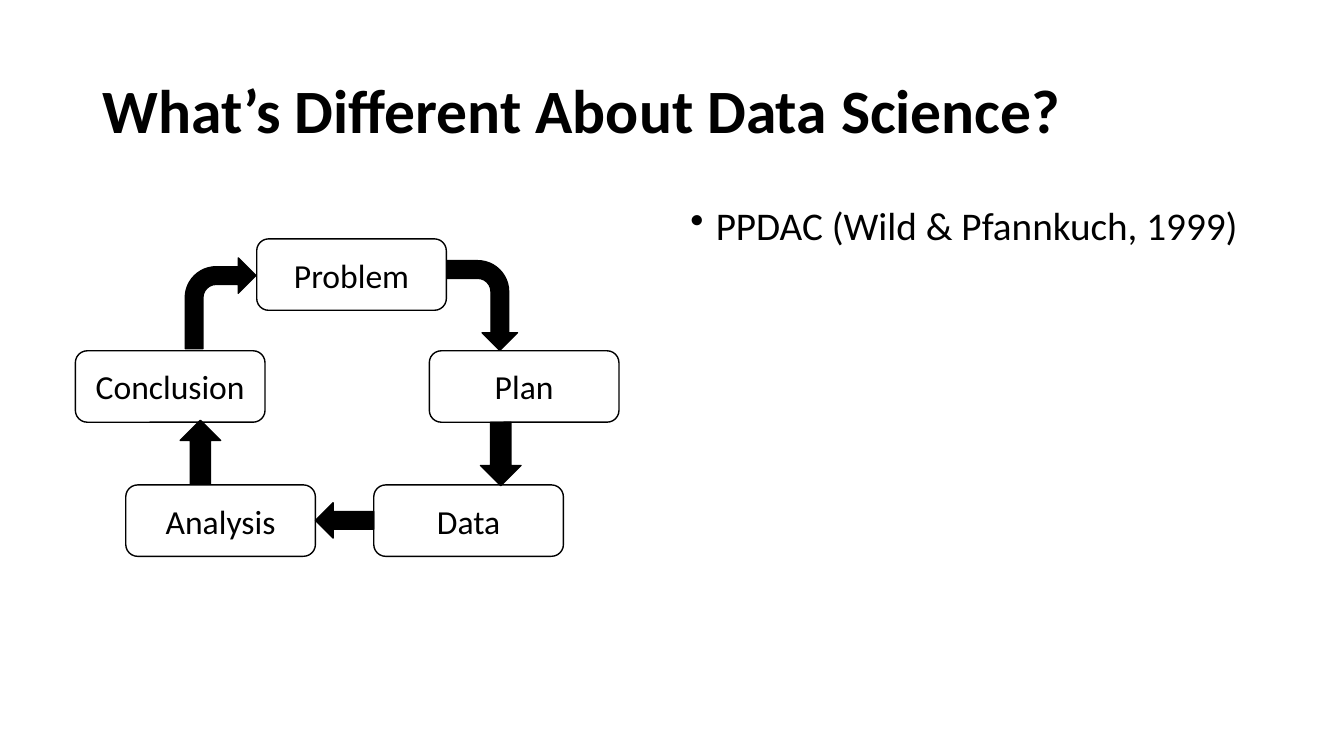
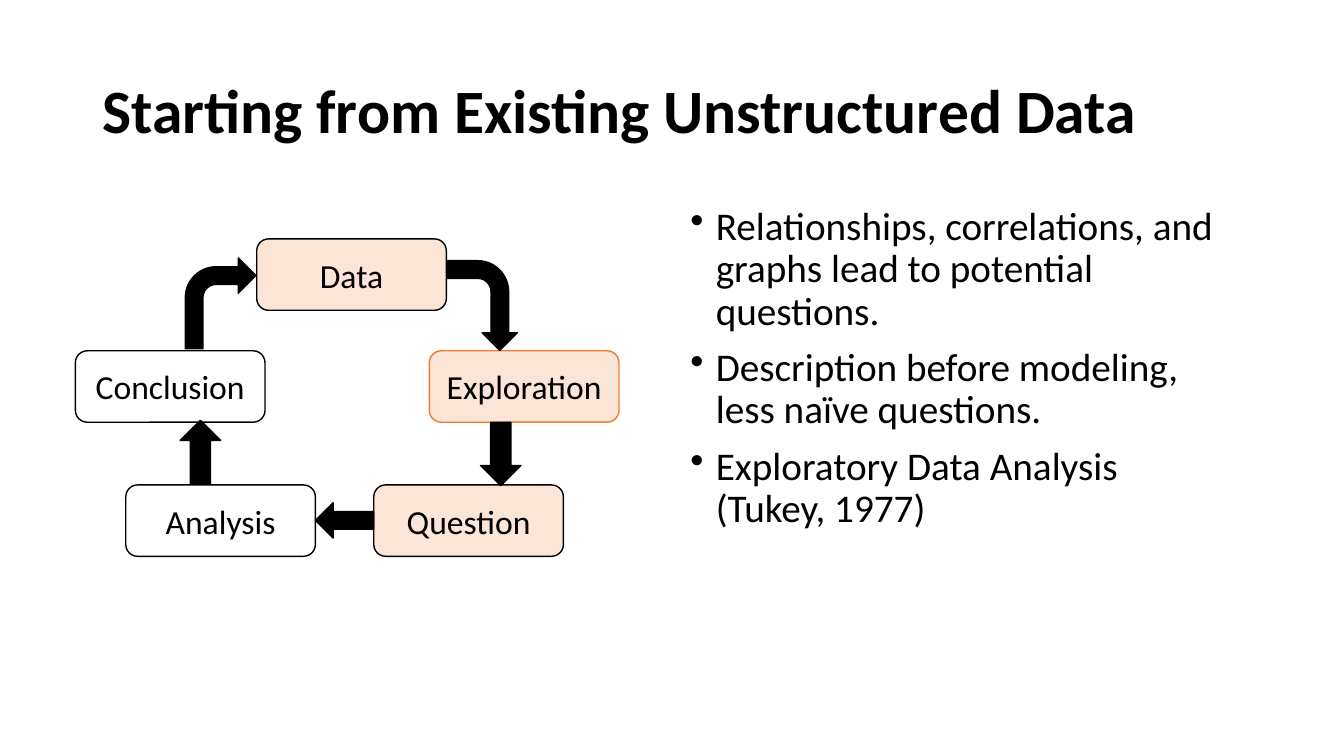
"""Builds two slides that compare inquiry cycles."""
import pptx
import pptx.dml.color
import pptx.enum.shapes
import pptx.enum.text
import pptx.oxml
import pptx.util

Cm = pptx.util.Cm
Pt = pptx.util.Pt
SHAPES = pptx.enum.shapes.MSO_SHAPE
ANCHOR = pptx.enum.text.MSO_ANCHOR
ALIGN = pptx.enum.text.PP_ALIGN

BLACK, PEACH, ORANGE = "000000", "FBE5D6", "ED7D31"
TITLE_BOX = (2.33, 1.01, 29.21, 3.68)
BULLET_BOX = (17.15, 5.08, 14.39, 12.09)
CYCLE_BOX = (1.9, 6.02, 13.7, 8)

TITLE_FONT = {"name": "Calibri", "size": Pt(44), "bold": True}
BULLET_FONT = {"name": "Calibri", "size": Pt(28)}
STEP_FONT = {"name": "Calibri", "size": Pt(24)}
TITLE_PARAGRAPH = {"line_spacing": 0.9}
BULLET_PARAGRAPH = {"line_spacing": 0.9, "space_before": Pt(10)}
STEP_PARAGRAPH = {"alignment": ALIGN.CENTER}

STEP_SIZE = (4.78, 1.8)
STEP_OFFSETS = [(4.57, 0), (8.92, 2.82), (7.52, 6.2), (1.27, 6.2), (0, 2.82)]
ARROWS = [
    (SHAPES.BENT_ARROW, (9.12, 0.79, 2.26, 1.78), 90),
    (SHAPES.BENT_ARROW, (2.77, 0.48, 1.78, 2.29), 0),
    (SHAPES.DOWN_ARROW, (10.21, 4.62, 1.02, 1.6), 0),
    (SHAPES.DOWN_ARROW, (2.64, 4.57, 1.02, 1.6), 180),
    (SHAPES.LEFT_ARROW, (6.05, 6.65, 1.47, 0.89), 0),
]

SLIDES = [
    {
        "title": "What’s Different About Data Science?",
        "bullets": ["PPDAC (Wild & Pfannkuch, 1999)"],
        "steps": [("Problem", None, BLACK), ("Plan", None, BLACK), ("Data", None, BLACK),
                  ("Analysis", None, BLACK), ("Conclusion", None, BLACK)],
    },
    {
        "title": "Starting from Existing Unstructured Data",
        "bullets": [
            "Relationships, correlations, and graphs lead to potential questions.",
            "Description before modeling,\nless naïve questions.",
            "Exploratory Data Analysis\n(Tukey, 1977)",
        ],
        "steps": [("Data", PEACH, BLACK), ("Exploration", PEACH, ORANGE),
                  ("Question", PEACH, BLACK), ("Analysis", None, BLACK),
                  ("Conclusion", None, BLACK)],
    },
]


def set_color(color_format, color):
    """Give a colour format the colour of a hex string."""
    color_format.rgb = pptx.dml.color.RGBColor.from_string(color)


def apply_format(target, values):
    """Set each attribute named in a dict of format values."""
    for name, value in values.items():
        setattr(target, name, value)


def write_paragraph(paragraph, text, paragraph_format, font_format):
    """Write text into a paragraph and format its runs."""
    paragraph.text = text
    apply_format(paragraph, paragraph_format)
    for run in paragraph.runs:
        apply_format(run.font, font_format)
        set_color(run.font.color, BLACK)


def add_bullet(paragraph):
    """Give a paragraph a round bullet with a hanging indent."""
    properties = paragraph._p.get_or_add_pPr()
    properties.set("marL", str(Cm(0.64)))
    properties.set("indent", str(-Cm(0.64)))
    bullet = pptx.oxml.parse_xml(
        '<a:buChar xmlns:a="http://schemas.openxmlformats.org/drawingml/2006/main" char="•"/>')
    properties.append(bullet)


def add_text_frame(slide, box, anchor):
    """Add a wrapping text box and return its frame."""
    frame = slide.shapes.add_textbox(*map(Cm, box)).text_frame
    apply_format(frame, {"word_wrap": True, "vertical_anchor": anchor})
    return frame


def add_title(slide, box, text):
    """Add the slide title."""
    frame = add_text_frame(slide, box, ANCHOR.MIDDLE)
    write_paragraph(frame.paragraphs[0], text, TITLE_PARAGRAPH, TITLE_FONT)


def add_bullets(slide, box, texts):
    """Add the bullet list."""
    frame = add_text_frame(slide, box, ANCHOR.TOP)
    for index, text in enumerate(texts):
        paragraph = frame.add_paragraph() if index else frame.paragraphs[0]
        write_paragraph(paragraph, text, BULLET_PARAGRAPH, BULLET_FONT)
        add_bullet(paragraph)


def add_outlined_shape(slide, kind, box, fill, line):
    """Add a preset shape with a thin outline and an optional fill."""
    shape = slide.shapes.add_shape(kind, *map(Cm, box))
    shape.shadow.inherit = False
    if fill:
        shape.fill.solid()
        set_color(shape.fill.fore_color, fill)
    else:
        shape.fill.background()
    shape.line.width = Pt(1)
    set_color(shape.line.color, line)
    return shape


def add_cycle(slide, box, steps):
    """Add the five steps of a cycle and the arrows between them."""
    left, top = box[:2]
    for (x, y), (text, fill, line) in zip(STEP_OFFSETS, steps):
        step_box = (left + x, top + y, *STEP_SIZE)
        shape = add_outlined_shape(slide, SHAPES.ROUNDED_RECTANGLE, step_box, fill, line)
        shape.text_frame.vertical_anchor = ANCHOR.MIDDLE
        write_paragraph(shape.text_frame.paragraphs[0], text, STEP_PARAGRAPH, STEP_FONT)
    for kind, (x, y, width, height), rotation in ARROWS:
        arrow_box = (left + x, top + y, width, height)
        add_outlined_shape(slide, kind, arrow_box, BLACK, BLACK).rotation = rotation


def add_cycle_slide(presentation, content):
    """Add a slide with a title, a cycle and a bullet list."""
    slide = presentation.slides.add_slide(presentation.slide_layouts[6])
    add_title(slide, TITLE_BOX, content["title"])
    add_bullets(slide, BULLET_BOX, content["bullets"])
    add_cycle(slide, CYCLE_BOX, content["steps"])


def main():
    """Build and save the presentation."""
    presentation = pptx.Presentation()
    apply_format(presentation, {"slide_width": Cm(33.87), "slide_height": Cm(19.05)})
    for content in SLIDES:
        add_cycle_slide(presentation, content)
    presentation.save("out.pptx")


if __name__ == "__main__":
    main()
